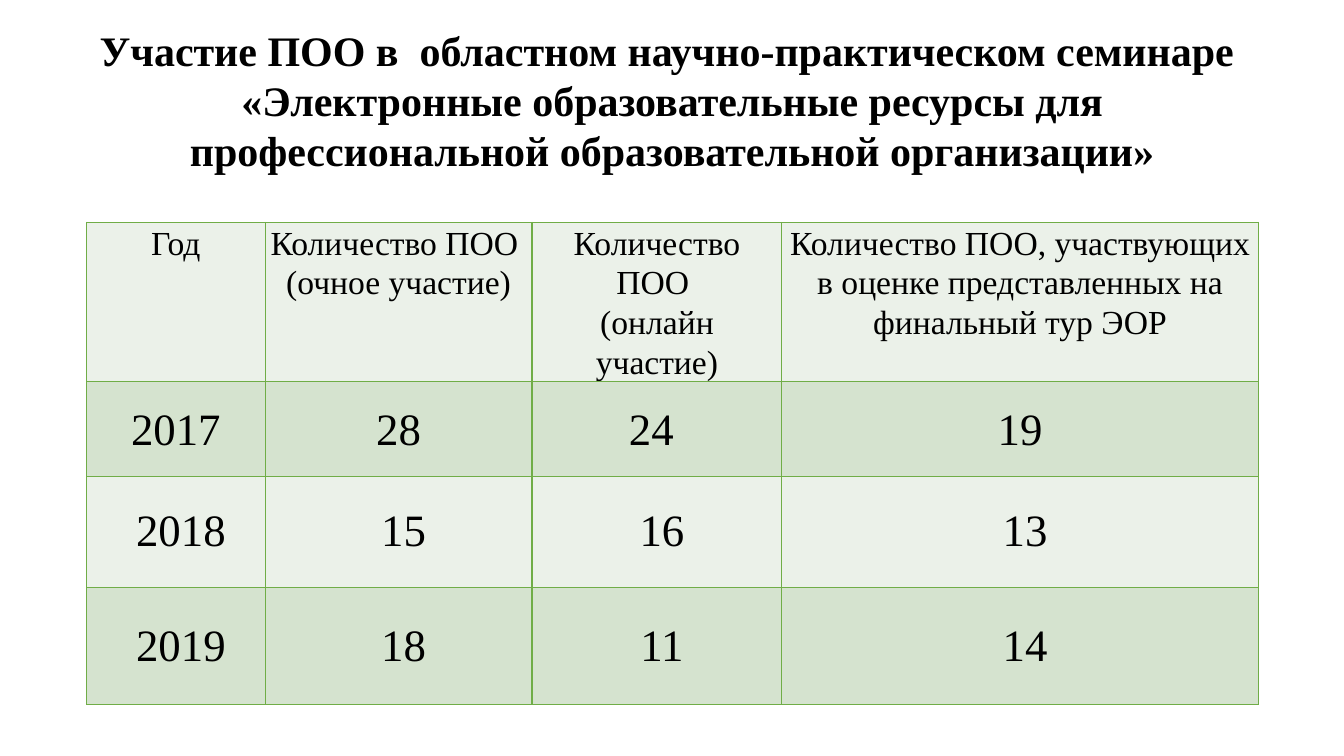
from lxml import etree
from pptx import Presentation
from pptx.dml.color import RGBColor
from pptx.enum.text import MSO_ANCHOR, PP_ALIGN
from pptx.oxml.ns import qn
from pptx.util import Pt

CENTER = PP_ALIGN.CENTER
TOP, MIDDLE = MSO_ANCHOR.TOP, MSO_ANCHOR.MIDDLE

# Content
HEADING = [
    "Участие ПОО в  областном научно-практическом семинаре ",
    "«Электронные образовательные ресурсы для профессиональной образовательной организации»",
]
COLUMN_HEADS = [
    ["Год"],
    ["Количество ПОО ", "(очное участие)"],
    ["Количество ПОО ", "(онлайн участие)"],
    ["Количество ПОО, участвующих в оценке представленных на финальный тур ЭОР"],
]
YEARS = [
    ("2017", "28", "24 ", "19"),
    ("2018", "15", "16", "13"),
    ("2019", "18", "11", "14"),
]

# Look and measures, in points
FONT = "Times New Roman"
BLACK = RGBColor(0x00, 0x00, 0x00)
PALE_GREEN = RGBColor(0xEB, 0xF1, 0xE9)
SOFT_GREEN = RGBColor(0xD5, 0xE3, 0xCF)
BORDER_GREEN = RGBColor(0x70, 0xAD, 0x47)
LEFT, WIDTH = 61.9, 837
HEADING_TOP, HEADING_HEIGHT = 13.7, 116.6
TABLE_TOP = 159
COLUMN_WIDTHS = [127.5, 190.7, 178.4, 340.4]
ROW_HEIGHTS = [85.7, 67.8, 79.2, 84]
SIDE_MARGIN = 2.9
INDENT = 7.2


def write(frame, lines, size, bold=False, spacing=None, after=None, indent=0):
    for i, line in enumerate(lines):
        paragraph = frame.paragraphs[0] if i == 0 else frame.add_paragraph()
        paragraph.alignment = CENTER
        paragraph.line_spacing = spacing
        if after:
            paragraph.space_after = Pt(after)
        if indent:
            properties = paragraph._p.get_or_add_pPr()
            properties.set("marL", str(Pt(indent)))
            properties.set("indent", "0")
        run = paragraph.add_run()
        run.text = line
        run.font.name = FONT
        run.font.size = Pt(size)
        run.font.bold = bold
        run.font.color.rgb = BLACK


def add_borders(cell):
    properties = cell._tc.get_or_add_tcPr()
    for position, side in enumerate(("lnL", "lnR", "lnT", "lnB")):
        line = etree.Element(qn(f"a:{side}"), w=str(Pt(1)))
        fill = etree.SubElement(line, qn("a:solidFill"))
        etree.SubElement(fill, qn("a:srgbClr"), val=str(BORDER_GREEN))
        properties.insert(position, line)


deck = Presentation()
deck.slide_width, deck.slide_height = Pt(960), Pt(540)
slide = deck.slides.add_slide(deck.slide_layouts[6])

# Participation table
table = slide.shapes.add_table(
    len(ROW_HEIGHTS), len(COLUMN_WIDTHS),
    Pt(LEFT), Pt(TABLE_TOP), Pt(WIDTH), Pt(sum(ROW_HEIGHTS)),
).table
for column, width in zip(table.columns, COLUMN_WIDTHS):
    column.width = Pt(width)
for row, height in zip(table.rows, ROW_HEIGHTS):
    row.height = Pt(height)

rows = [COLUMN_HEADS] + [[[value] for value in year] for year in YEARS]
for r, row in enumerate(rows):
    for c, lines in enumerate(row):
        cell = table.cell(r, c)
        cell.margin_left = cell.margin_right = Pt(SIDE_MARGIN)
        cell.margin_top = cell.margin_bottom = 0
        cell.vertical_anchor = TOP if r == 0 else MIDDLE
        cell.fill.solid()
        cell.fill.fore_color.rgb = SOFT_GREEN if r % 2 else PALE_GREEN
        add_borders(cell)
        layout = {"spacing": 1.07} if r < 2 else {"after": 6, "indent": INDENT}
        write(cell.text_frame, lines, size=24 if r == 0 else 32, **layout)

# Heading
heading = slide.shapes.add_textbox(
    Pt(LEFT), Pt(HEADING_TOP), Pt(WIDTH), Pt(HEADING_HEIGHT)
).text_frame
heading.word_wrap = True
write(heading, HEADING, size=30, bold=True)

deck.save("out.pptx")
